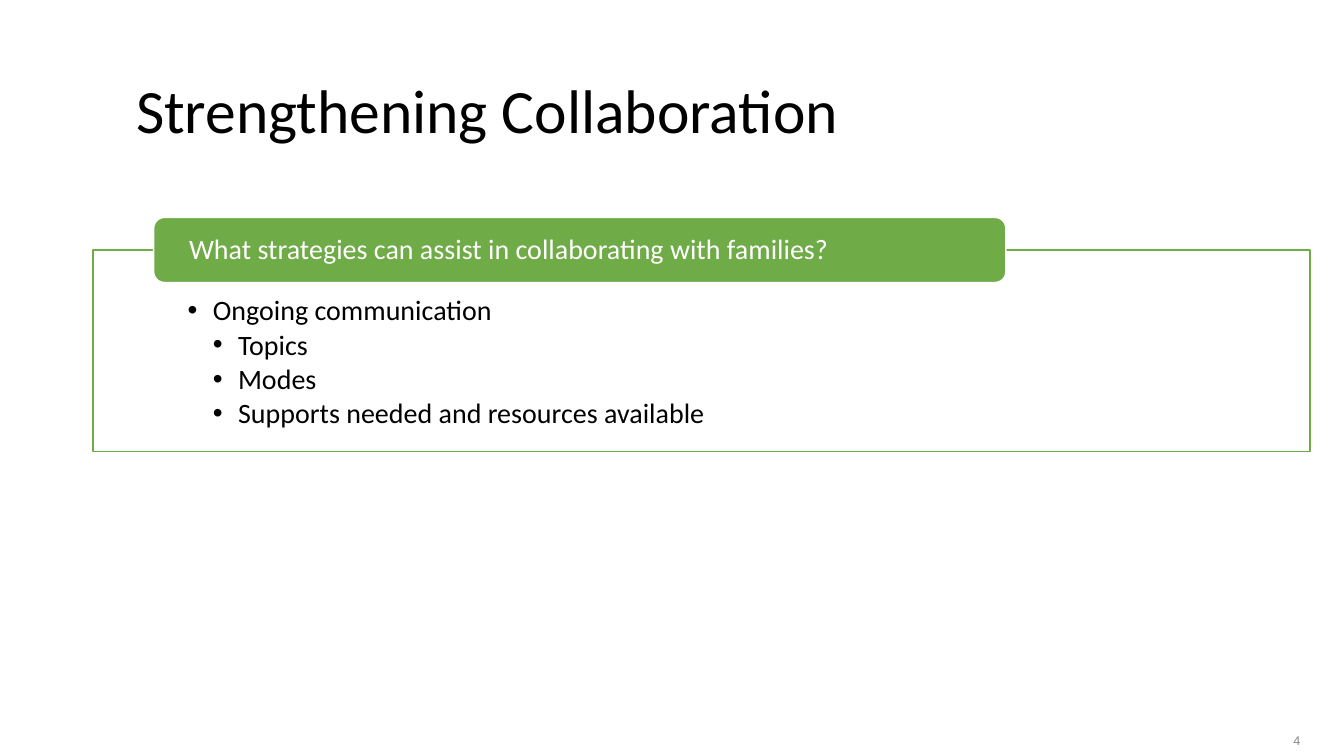
from lxml import etree
from pptx import Presentation
from pptx import util as u
from pptx.dml.color import RGBColor
from pptx.enum import shapes, text
from pptx.oxml import ns

COLORS = {
    "ink": "000000",
    "paper": "FFFFFF",
    "green": "6FAB46",
    "muted": "888888",
}
BULLET_STEP = 0.635  # cm of indent per level


def rgb(name):
    return RGBColor.from_string(COLORS[name])


def add_bullet(paragraph, level):
    props = paragraph._p.get_or_add_pPr()
    props.set("marL", str(u.Cm(BULLET_STEP * (level + 1))))
    props.set("indent", str(-u.Cm(BULLET_STEP)))
    color = etree.SubElement(props, ns.qn("a:buClr"))
    etree.SubElement(color, ns.qn("a:srgbClr"), val=COLORS["ink"])
    etree.SubElement(props, ns.qn("a:buFont"), typeface="Arial")
    etree.SubElement(props, ns.qn("a:buChar"), char="•")


def write(holder, lines, size=20, font="Calibri", color="ink", insets=(0.25, 0.13, 0.25, 0.13),
          anchor=text.MSO_ANCHOR.MIDDLE, align=text.PP_ALIGN.LEFT, spacing=0.9, bullets=False):
    """Fill a shape with (level, wording) lines; insets are left, top, right, bottom in cm."""
    frame = holder.text_frame
    frame.word_wrap = True
    frame.vertical_anchor = anchor
    frame.margin_left, frame.margin_top, frame.margin_right, frame.margin_bottom = map(u.Cm, insets)
    for index, (level, wording) in enumerate(lines):
        paragraph = frame.add_paragraph() if index else frame.paragraphs[0]
        paragraph.alignment = align
        paragraph.line_spacing = spacing
        paragraph.level = level
        if level:
            paragraph.space_before = u.Pt(3)
        if bullets:
            add_bullet(paragraph, level)
        run = paragraph.add_run()
        run.text = wording
        run.font.size = u.Pt(size)
        run.font.name = font
        run.font.color.rgb = rgb(color)


def add_box(slide, kind, box, fill, line):
    shape = slide.shapes.add_shape(kind, *map(u.Cm, box))
    shape.shadow.inherit = False
    shape.fill.solid()
    shape.fill.fore_color.rgb = rgb(fill)
    shape.line.color.rgb = rgb(line)
    shape.line.width = u.Pt(1)
    return shape


def add_title(slide, box, wording):
    write(slide.shapes.add_textbox(*map(u.Cm, box)), [(0, wording)], size=44)


def add_page_number(slide, box, number):
    write(slide.shapes.add_textbox(*map(u.Cm, box)), [(0, number)], size=9, font="Arial",
          color="muted", anchor=text.MSO_ANCHOR.BOTTOM, align=text.PP_ALIGN.RIGHT, spacing=1.0)


def add_strategy_panel(slide, box, question, strategies):
    left, top, width, height = box

    # Outlined panel with the answers
    panel = add_box(slide, shapes.MSO_SHAPE.RECTANGLE, box, "paper", "green")
    panel_color = panel.fill._xPr.find(ns.qn("a:solidFill"))[0]
    etree.SubElement(panel_color, ns.qn("a:alpha"), val="89000")
    write(panel, strategies, insets=(2.39, 1.17, 2.39, 0.41),
          anchor=text.MSO_ANCHOR.TOP, bullets=True)

    # Question tab, centred on the panel's top edge
    tab_height = 1.64
    tab_box = (left + 0.05 * width, top - tab_height / 2, 0.7 * width, tab_height)
    tab = add_box(slide, shapes.MSO_SHAPE.ROUNDED_RECTANGLE, tab_box, "green", "paper")
    write(tab, [(0, question)], color="paper", insets=(0.81, 0, 0.81, 0))


def main():
    deck = Presentation()
    deck.slide_width, deck.slide_height = u.Cm(33.87), u.Cm(19.05)
    slide = deck.slides.add_slide(deck.slide_layouts[6])

    add_title(slide, (3.18, 1.02, 28.35, 3.68), "Strengthening Collaboration")
    add_page_number(slide, (29.77, 18.08, 3.25, 0.89), "4")
    add_strategy_panel(
        slide, (2.34, 6.3, 30.68, 5.08),
        "What strategies can assist in collaborating with families?",
        [(0, "Ongoing communication"), (1, "Topics"), (1, "Modes"),
         (1, "Supports needed and resources available")],
    )
    deck.save("out.pptx")


if __name__ == "__main__":
    main()
